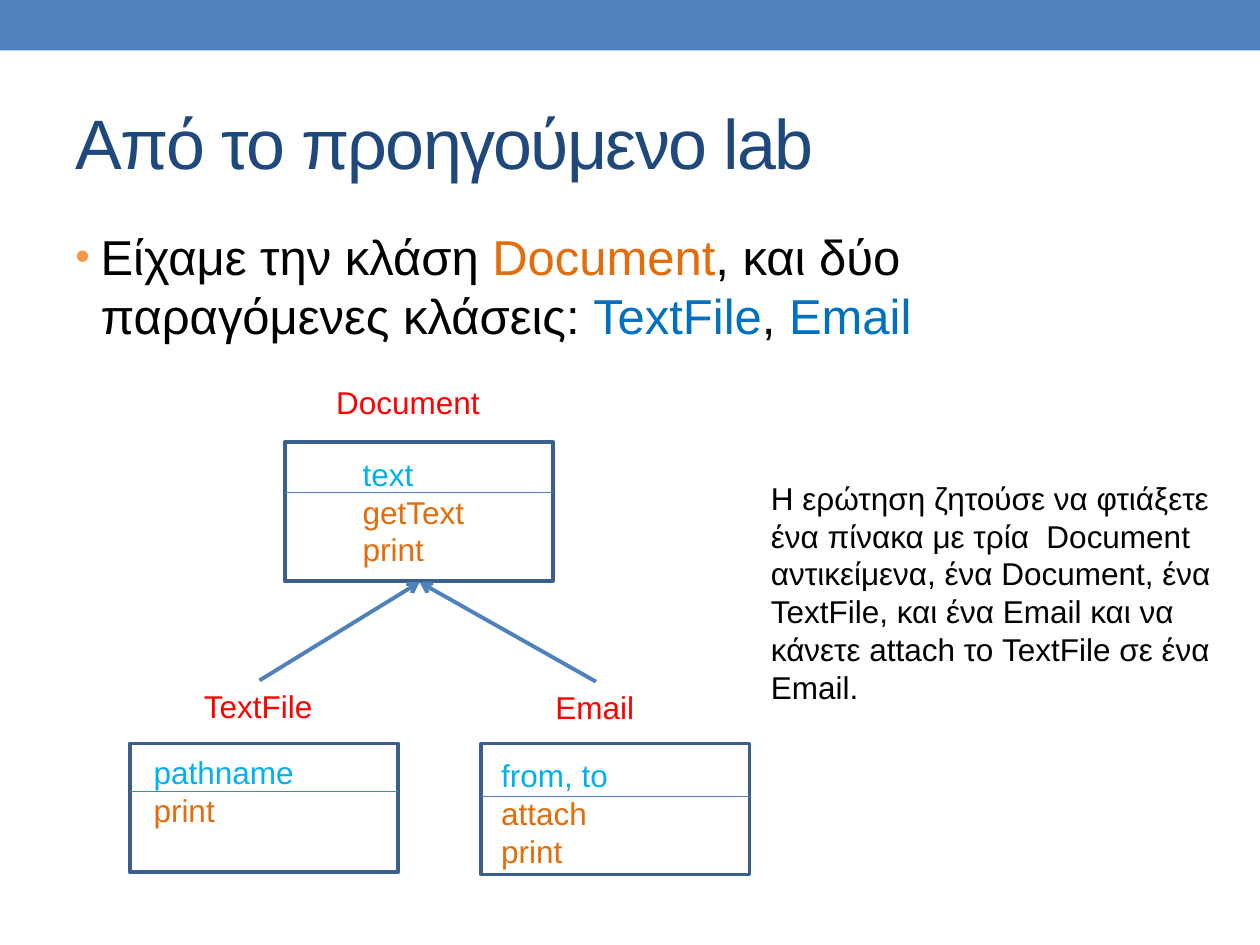
import dataclasses

import lxml.etree
import pptx
import pptx.dml.color
import pptx.enum.shapes
import pptx.enum.text
import pptx.oxml.ns
import pptx.util

EMU_PER_PX = 9144
FONT = "Arial"
BLUE, BORDER, NAVY, BLACK = "4F81BD", "3A5F8C", "1F497D", "000000"
RED, SKY, ORANGE, LINK_BLUE = "FF0000", "00B0F0", "E46C0A", "0070C0"
CLASS_WIDTH = 213


@dataclasses.dataclass(frozen=True)
class Area:
    """A rectangle in px, at 100 px to the inch."""

    left: int
    top: int
    width: int
    height: int


@dataclasses.dataclass(frozen=True)
class ClassBox:
    """A class of the diagram with its name, field and methods."""

    name: str
    name_area: Area
    frame: Area
    divider_y: int
    members: list[str]
    members_area: Area


CLASSES = [
    ClassBox("TextFile", Area(152, 540, 107, 40), Area(103, 590, CLASS_WIDTH, 102),
             628, ["pathname", "print"], Area(112, 593, 132, 71)),
    ClassBox("Email", Area(431, 541, 83, 40), Area(382, 590, CLASS_WIDTH, 104),
             632, ["from, to", "attach", "print"], Area(388, 595, 106, 101)),
    ClassBox("Document", Area(257, 299, 135, 40), Area(226, 351, CLASS_WIDTH, 110),
             391, ["text", "getText", "print"], Area(278, 356, 102, 101)),
]


def px(length: int) -> int:
    """Turn px into EMU."""
    return pptx.util.Emu(length * EMU_PER_PX)


def color(value: str):
    """Turn a hex string into a colour."""
    return pptx.dml.color.RGBColor.from_string(value)


def add_rectangle(slide, area: Area, fill: str = "", line: str = ""):
    """Draw a rectangle with an optional fill and outline."""
    shape = slide.shapes.add_shape(
        pptx.enum.shapes.MSO_SHAPE.RECTANGLE,
        px(area.left), px(area.top), px(area.width), px(area.height))
    shape.shadow.inherit = False
    if fill:
        shape.fill.solid()
        shape.fill.fore_color.rgb = color(fill)
    else:
        shape.fill.background()
    if line:
        shape.line.color.rgb = color(line)
        shape.line.width = pptx.util.Pt(2.08)
    else:
        shape.line.fill.background()


def add_line(slide, start: tuple[int, int], end: tuple[int, int],
             width: float, arrow: bool = False):
    """Draw a straight line, with an arrowhead at its end if asked."""
    line = slide.shapes.add_connector(
        pptx.enum.shapes.MSO_CONNECTOR.STRAIGHT, *map(px, start + end))
    line.line.color.rgb = color(BLUE)
    line.line.width = pptx.util.Pt(width)
    if arrow:
        lxml.etree.SubElement(line.line._get_or_add_ln(),
                              pptx.oxml.ns.qn("a:tailEnd"), type="arrow")
    lxml.etree.SubElement(line._element.spPr, pptx.oxml.ns.qn("a:effectLst"))


def add_text(slide, area: Area, paragraphs: list[list[tuple[str, str]]],
             size: int = 18, wrap: bool = False):
    """Add a text box from paragraphs of (text, colour) spans."""
    box = slide.shapes.add_textbox(
        px(area.left), px(area.top), px(area.width), px(area.height))
    frame = box.text_frame
    frame.word_wrap = wrap
    for index, spans in enumerate(paragraphs):
        para = frame.add_paragraph() if index else frame.paragraphs[0]
        for text, tone in spans:
            span = para.add_run()
            span.text = text
            span.font.name = FONT
            span.font.size = pptx.util.Pt(size)
            span.font.color.rgb = color(tone)
    return frame


def add_bullet(para):
    """Give a paragraph a hanging orange bullet."""
    properties = para._p.get_or_add_pPr()
    properties.set("marL", str(px(20)))
    properties.set("indent", str(px(-20)))
    qn = pptx.oxml.ns.qn
    tone = lxml.etree.SubElement(properties, qn("a:buClr"))
    lxml.etree.SubElement(tone, qn("a:srgbClr"), val="F79646")
    lxml.etree.SubElement(properties, qn("a:buSzPct"), val="85000")
    lxml.etree.SubElement(properties, qn("a:buFont"), typeface=FONT)
    lxml.etree.SubElement(properties, qn("a:buChar"), char="•")


def add_class(slide, item: ClassBox):
    """Draw one class with its divider, members and name."""
    add_rectangle(slide, item.frame, line=BORDER)
    tones = [SKY] + [ORANGE] * (len(item.members) - 1)
    add_text(slide, item.members_area,
             [[member] for member in zip(item.members, tones)])
    left = item.frame.left
    add_line(slide, (left, item.divider_y),
             (left + item.frame.width, item.divider_y), 0.75)
    add_text(slide, item.name_area, [[(item.name, RED)]])


def main():
    """Build and save the slide."""
    deck = pptx.Presentation()
    deck.slide_width, deck.slide_height = px(1000), px(750)
    slide = deck.slides.add_slide(deck.slide_layouts[6])
    add_rectangle(slide, Area(0, 0, 1000, 40), fill=BLUE)

    title = add_text(slide, Area(50, 58, 900, 108),
                     [[("Από το προηγούμενο lab", NAVY)]], 40, True)
    title.vertical_anchor = pptx.enum.text.MSO_ANCHOR.MIDDLE
    title.paragraphs[0].runs[0].font._element.set("spc", "-100")

    body = add_text(slide, Area(50, 175, 900, 533), [[
        ("Είχαμε την κλάση ", BLACK), ("Document", ORANGE),
        (", και δύο παραγόμενες κλάσεις: ", BLACK),
        ("TextFile", LINK_BLUE), (", ", BLACK), ("Email", LINK_BLUE)]], 28, True)
    body.paragraphs[0].space_before = pptx.util.Pt(5.6)
    add_bullet(body.paragraphs[0])

    for item in CLASSES:
        add_class(slide, item)
    for start in ((206, 540), (473, 541)):
        add_line(slide, start, (333, 462), 2.25, arrow=True)

    add_text(slide, Area(602, 375, 398, 192), [[(
        "Η ερώτηση ζητούσε να φτιάξετε ένα πίνακα με τρία  Document "
        "αντικείμενα, ένα Document, ένα TextFile, και ένα Email και να "
        "κάνετε attach το TextFile σε ένα Email.", BLACK)]], wrap=True)
    deck.save("out.pptx")


if __name__ == "__main__":
    main()
